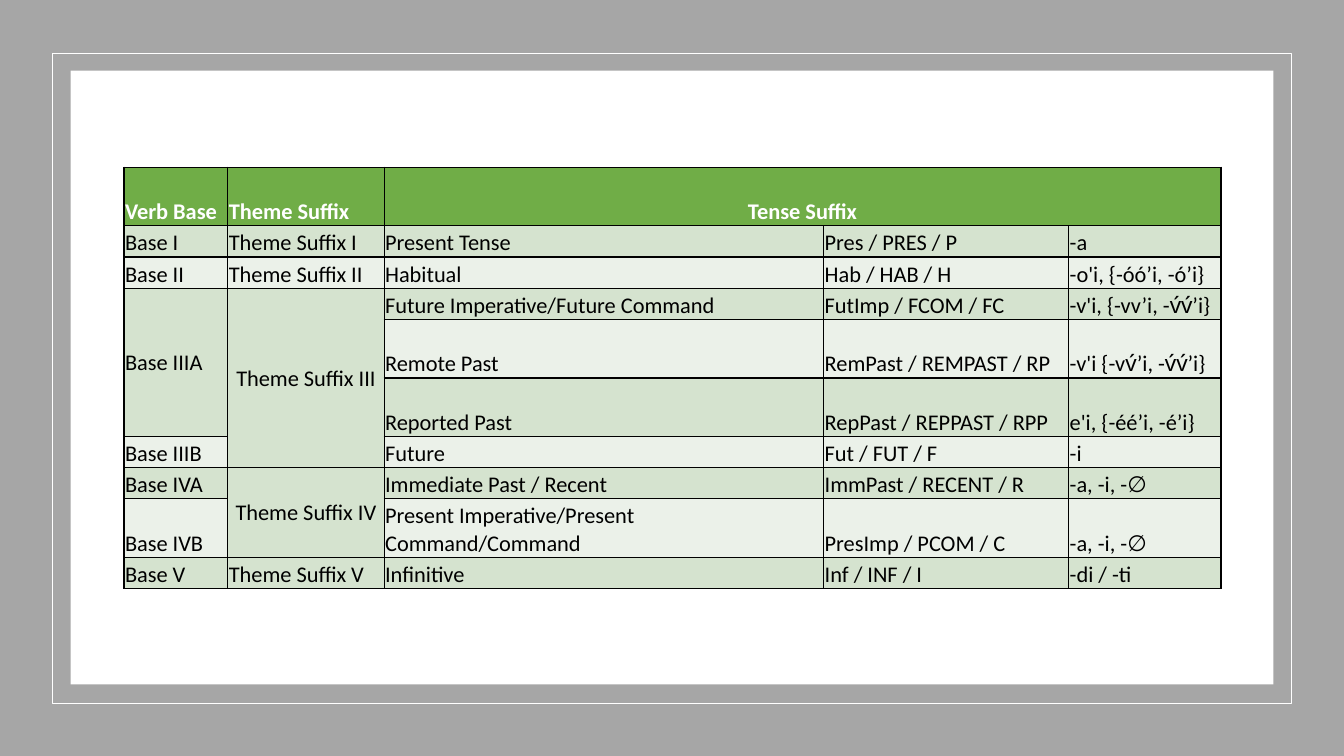
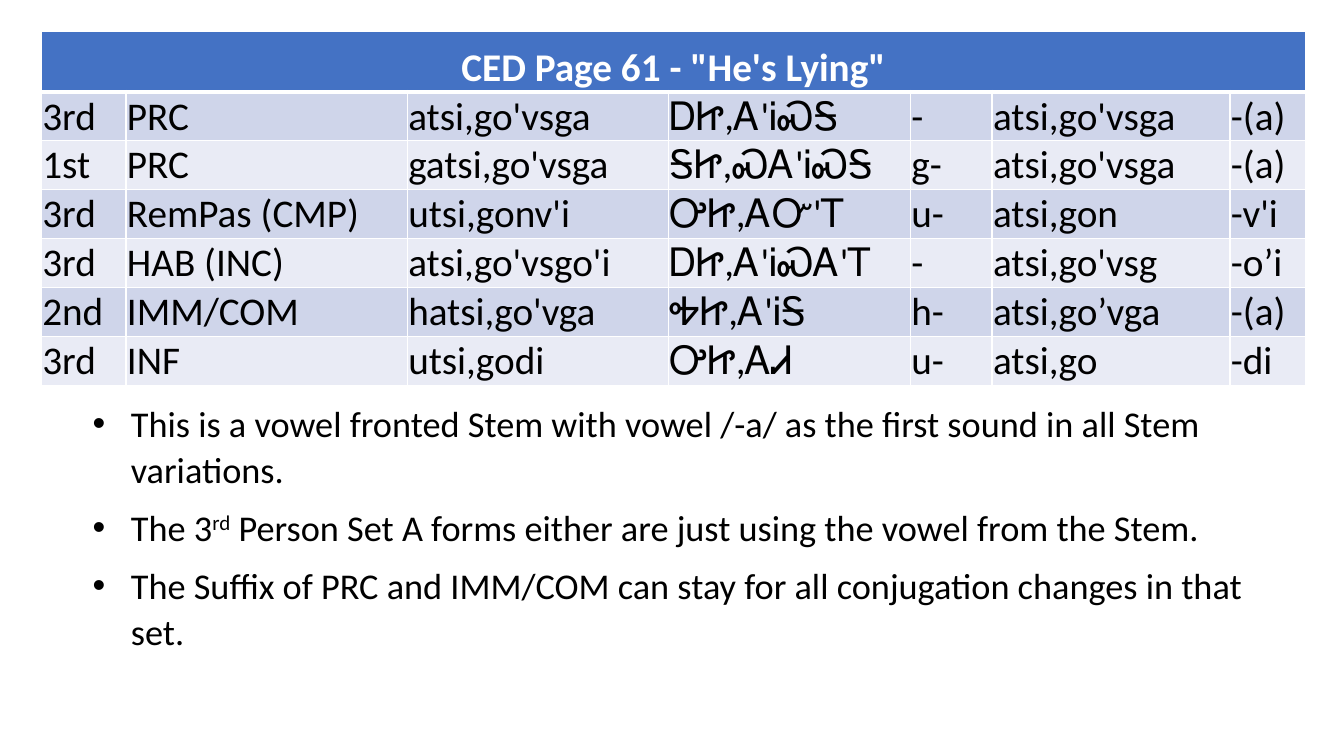
from lxml import etree
from pptx import Presentation
from pptx.dml.color import RGBColor
from pptx.enum.shapes import MSO_SHAPE
from pptx.enum.text import MSO_ANCHOR, PP_ALIGN
from pptx.oxml.ns import qn
from pptx.util import Inches, Pt

RECT = MSO_SHAPE.RECTANGLE
BOTTOM, MIDDLE = MSO_ANCHOR.BOTTOM, MSO_ANCHOR.MIDDLE
LEFT, CENTER = PP_ALIGN.LEFT, PP_ALIGN.CENTER

FONT = "Calibri"
WHITE, BLACK, GREY = "FFFFFF", "000000", "A6A6A6"
GREEN = {"head": "70AD47", "bands": ("D5E3CF", "EBF1E9"), "border": BLACK, "head_rule": 1}
BLUE = {"head": "4472C4", "bands": ("CFD5EA", "E9EBF5"), "border": WHITE, "head_rule": 3}

SUFFIX_COLS = [1.03, 1.55, 4.36, 2.43, 1.51]
LOW, TALL = 0.31, 0.58
SUFFIX_HEIGHTS = [TALL, LOW, LOW, LOW, TALL, TALL, LOW, LOW, TALL, LOW]
SUFFIX_ROWS = [
    ["Verb Base", "Theme Suffix", "Tense Suffix", None, None],
    ["Base I", "Theme Suffix I", "Present Tense", "Pres / PRES / P", "-a"],
    ["Base II", "Theme Suffix II", "Habitual", "Hab / HAB / H", "-o'i, {-óó’i, -ó’i}"],
    ["Base IIIA", "Theme Suffix III", "Future Imperative/Future Command",
     "FutImp / FCOM / FC", "-v'i, {-vv’i, -v́v́’i}"],
    [None, None, "Remote Past", "RemPast / REMPAST / RP", "-v'i {-vv́’i, -v́v́’i}"],
    [None, None, "Reported Past", "RepPast / REPPAST / RPP", "e'i, {-éé’i, -é’i}"],
    ["Base IIIB", None, "Future", "Fut / FUT / F", "-i"],
    ["Base IVA", "Theme Suffix IV", "Immediate Past / Recent", "ImmPast / RECENT / R", "-a, -i, -∅"],
    ["Base IVB", None, "Present Imperative/Present Command/Command", "PresImp / PCOM / C", "-a, -i, -∅"],
    ["Base V", "Theme Suffix V", "Infinitive", "Inf / INF / I", "-di / -ti"],
]
SUFFIX_SPANS = {(0, 2): (1, 3), (3, 0): (3, 1), (3, 1): (4, 1), (7, 1): (2, 1)}
SUFFIX_CENTERED = {(0, 2), (3, 1), (7, 1)}

VERB_COLS = [0.84, 2.79, 2.59, 2.4, 0.81, 2.36, 0.75]
VERB_ROWS = [
    ["CED Page 61 - \"He's Lying\""] + [None] * 6,
    ["3rd", "PRC", "atsi,go'vsga", "ᎠᏥ,Ꭺ'ᎥᏍᎦ", "-", "atsi,go'vsga", "-(a)"],
    ["1st", "PRC", "gatsi,go'vsga", "ᎦᏥ,ᏍᎪ'ᎥᏍᎦ", "g-", "atsi,go'vsga", "-(a)"],
    ["3rd", "RemPas (CMP)", "utsi,gonv'i", "ᎤᏥ,ᎪᏅ'Ꭲ", "u-", "atsi,gon", "-v'i"],
    ["3rd", "HAB (INC)", "atsi,go'vsgo'i", "ᎠᏥ,Ꭺ'ᎥᏍᎪ'Ꭲ", "-", "atsi,go'vsg", "-o’i"],
    ["2nd", "IMM/COM", "hatsi,go'vga", "ᎭᏥ,Ꭺ'ᎥᎦ", "h-", "atsi,go’vga", "-(a)"],
    ["3rd", "INF", "utsi,godi", "ᎤᏥ,ᎪᏗ", "u-", "atsi,go", "-di"],
]
VERB_HEIGHTS = [0.6] + [0.48] * 6
VERB_NOTES = [
    [("This is a vowel fronted Stem with vowel /-a/ as the first sound in all Stem variations.", False)],
    [("The 3", False), ("rd", True),
     (" Person Set A forms either are just using the vowel from the Stem.", False)],
    [("The Suffix of PRC and IMM/COM can stay for all conjugation changes in that set.", False)],
]


def rgb(color):
    return RGBColor.from_string(color)


def add_run(p, text, size, color=BLACK, bold=False):
    r = p.add_run()
    r.text = text
    r.font.name, r.font.size, r.font.bold = FONT, Pt(size), bold
    r.font.color.rgb = rgb(color)
    return r


def add_rect(s, box, fill=None, line=None):
    sp = s.shapes.add_shape(RECT, *map(Inches, box))
    sp.shadow.inherit = False
    if fill:
        sp.fill.solid()
        sp.fill.fore_color.rgb = rgb(fill)
    else:
        sp.fill.background()
    if line:
        sp.line.color.rgb = rgb(line)
        sp.line.width = Pt(1)
    else:
        sp.line.fill.background()


def set_border(cell, side, color, width):
    ln = etree.SubElement(cell._tc.get_or_add_tcPr(), qn(f"a:ln{side}"), w=str(Pt(width)))
    fill = etree.SubElement(ln, qn("a:solidFill"))
    etree.SubElement(fill, qn("a:srgbClr"), val=color)


def style_cell(cell, row, theme):
    cell.margin_left = cell.margin_right = cell.margin_top = Inches(0.01)
    cell.margin_bottom = 0
    for side in "LRTB":
        on_rule = (row, side) in ((0, "B"), (1, "T"))
        set_border(cell, side, theme["border"], theme["head_rule"] if on_rule else 1)
    cell.fill.solid()
    cell.fill.fore_color.rgb = rgb(theme["bands"][(row - 1) % 2] if row else theme["head"])


def add_grid(s, left, top, cols, heights, rows, theme, size, spans, centered):
    box = (left, top, sum(cols), sum(heights))
    table = s.shapes.add_table(len(rows), len(cols), *map(Inches, box)).table
    table.first_row = table.horz_banding = False
    for column, width in zip(table.columns, cols):
        column.width = Inches(width)
    for line, height in zip(table.rows, heights):
        line.height = Inches(height)
    for i, row in enumerate(rows):
        for j, text in enumerate(row):
            cell = table.cell(i, j)
            style_cell(cell, i, theme)
            if text is None:
                continue
            down, across = spans.get((i, j), (1, 1))
            if down * across > 1:
                cell.merge(table.cell(i + down - 1, j + across - 1))
            cell.vertical_anchor = MIDDLE if down > 1 else BOTTOM
            p = cell.text_frame.paragraphs[0]
            p.alignment = CENTER if (i, j) in centered else LEFT
            add_run(p, text, size, BLACK if i else WHITE, i == 0)


def add_bullets(s, box, items, size):
    tf = s.shapes.add_textbox(*map(Inches, box)).text_frame
    tf.word_wrap = True
    for i, runs in enumerate(items):
        p = tf.add_paragraph() if i else tf.paragraphs[0]
        p.line_spacing, p.space_after = 1.07, Pt(8)
        pPr = p._p.get_or_add_pPr()
        pPr.set("marL", str(Inches(0.38)))
        pPr.set("indent", str(-Inches(0.38)))
        etree.SubElement(pPr, qn("a:buFont"), typeface="Arial")
        etree.SubElement(pPr, qn("a:buChar"), char="•")
        for text, raised in runs:
            r = add_run(p, text, size)
            if raised:
                r._r.get_or_add_rPr().set("baseline", "30000")


def add_frame(s, width, height):
    add_rect(s, (0, 0, width, height), fill=GREY)
    add_rect(s, (0.52, 0.53, width - 1.04, height - 1.05), line=WHITE)
    add_rect(s, (0.7, 0.7, width - 1.4, height - 1.41), fill=WHITE)


def suffix_slide(s, width, height):
    add_frame(s, width, height)
    add_grid(s, 1.23, 1.66, SUFFIX_COLS, SUFFIX_HEIGHTS, SUFFIX_ROWS, GREEN, 16,
             SUFFIX_SPANS, SUFFIX_CENTERED)


def verb_slide(s):
    add_grid(s, 0.41, 0.31, VERB_COLS, VERB_HEIGHTS, VERB_ROWS, BLUE, 28,
             {(0, 0): (1, len(VERB_COLS))}, {(0, 0)})
    add_bullets(s, (0.82, 3.9, 12.03, 3.06), VERB_NOTES, 25.9)


def main():
    width, height = 13.33, 7.5
    prs = Presentation()
    prs.slide_width, prs.slide_height = Inches(width), Inches(height)
    blank = prs.slide_layouts[6]
    suffix_slide(prs.slides.add_slide(blank), width, height)
    verb_slide(prs.slides.add_slide(blank))
    prs.save("out.pptx")


if __name__ == "__main__":
    main()
